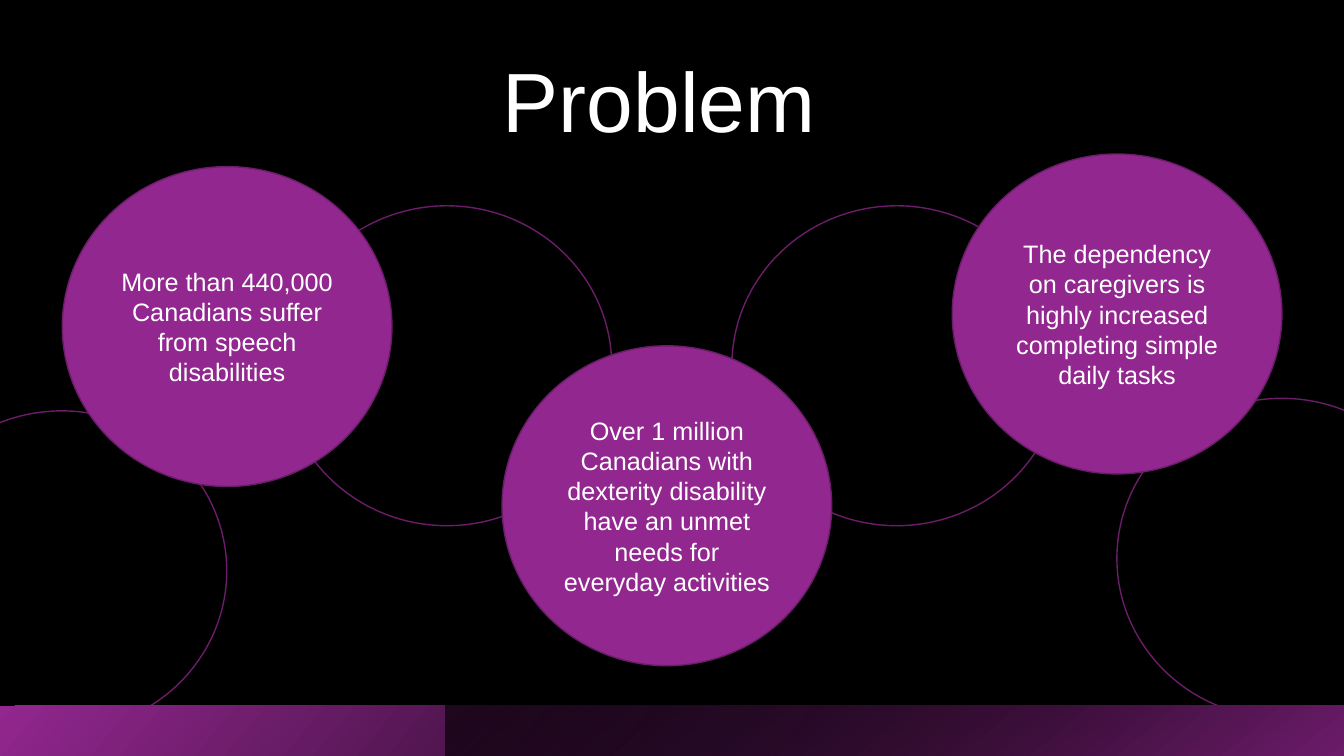
import lxml.etree
import pptx
import pptx.dml.color
import pptx.enum.shapes
import pptx.enum.text
import pptx.oxml.ns
import pptx.util

Pt = pptx.util.Pt
RGBColor = pptx.dml.color.RGBColor
MSO_SHAPE = pptx.enum.shapes.MSO_SHAPE

BLACK = RGBColor(0x00, 0x00, 0x00)
WHITE = RGBColor(0xFF, 0xFF, 0xFF)
PURPLE = RGBColor(0x92, 0x27, 0x8F)
DEEP_PURPLE = RGBColor(0x6D, 0x1D, 0x6B)
OUTLINE = RGBColor(0x6C, 0x1D, 0x6A)

FONT = "Arial"
SLIDE_WIDTH, SLIDE_HEIGHT = 960, 540
BAR_HEIGHT = 36
CIRCLE_WIDTH, CIRCLE_HEIGHT = 235.5, 228.5

OUTER_RINGS = [(-73.5, 293.5), (797.8, 284.5)]
INNER_RINGS = [(201.5, 147), (522.8, 147)]
PROBLEMS = [
    (44.5, 119, "More than 440,000 Canadians suffer from speech disabilities"),
    (680.2, 110, "The dependency on caregivers is highly increased completing simple daily tasks"),
    (358.6, 247, "Over 1 million Canadians with dexterity disability have an unmet needs for everyday activities"),
]


def write_text(shape, text, size):
    shape.text_frame.word_wrap = True
    paragraph = shape.text_frame.paragraphs[0]
    paragraph.text = text
    paragraph.alignment = pptx.enum.text.PP_ALIGN.CENTER
    paragraph.font.name = FONT
    paragraph.font.size = Pt(size)
    paragraph.font.color.rgb = WHITE
    return paragraph


def add_title(slide, text):
    title = slide.shapes.add_textbox(Pt(89.3), Pt(39.6), Pt(763), Pt(129.6))
    write_text(title, text, 60).line_spacing = 0.9


def add_circle(slide, left, top, text=None):
    circle = slide.shapes.add_shape(
        MSO_SHAPE.FLOWCHART_CONNECTOR,
        Pt(left), Pt(top), Pt(CIRCLE_WIDTH), Pt(CIRCLE_HEIGHT),
    )
    circle.shadow.inherit = False
    circle.line.color.rgb = OUTLINE
    circle.line.width = Pt(1)
    if text is None:
        circle.fill.background()
        return
    circle.fill.solid()
    circle.fill.fore_color.rgb = PURPLE
    circle.text_frame.vertical_anchor = pptx.enum.text.MSO_ANCHOR.MIDDLE
    write_text(circle, text, 18)


def add_gradient_bar(slide, left, angle, stops):
    bar = slide.shapes.add_shape(
        MSO_SHAPE.RECTANGLE,
        Pt(left), Pt(SLIDE_HEIGHT - BAR_HEIGHT), Pt(SLIDE_WIDTH - left), Pt(BAR_HEIGHT),
    )
    bar.shadow.inherit = False
    bar.line.fill.background()
    bar.fill.gradient()
    bar.fill.gradient_angle = 360 - angle
    for stop, (position, color) in zip(bar.fill.gradient_stops, stops):
        stop.position = position
        stop.color.rgb = color
    return bar


def set_first_stop_opacity(bar, percent):
    color = bar.element.find(".//" + pptx.oxml.ns.qn("a:srgbClr"))
    alpha = lxml.etree.SubElement(color, pptx.oxml.ns.qn("a:alpha"))
    alpha.set("val", str(percent * 1000))


def main():
    presentation = pptx.Presentation()
    presentation.slide_width = Pt(SLIDE_WIDTH)
    presentation.slide_height = Pt(SLIDE_HEIGHT)
    slide = presentation.slides.add_slide(presentation.slide_layouts[6])
    slide.background.fill.solid()
    slide.background.fill.fore_color.rgb = BLACK

    for left, top in OUTER_RINGS:
        add_circle(slide, left, top)
    add_title(slide, "Problem")
    add_gradient_bar(slide, 0, 40, [(0, PURPLE), (0.78, BLACK)])
    overlay = add_gradient_bar(slide, 318, 50, [(0, BLACK), (1, DEEP_PURPLE)])
    set_first_stop_opacity(overlay, 63)
    for left, top in INNER_RINGS:
        add_circle(slide, left, top)
    for left, top, text in PROBLEMS:
        add_circle(slide, left, top, text)

    presentation.save("out.pptx")


if __name__ == "__main__":
    main()
